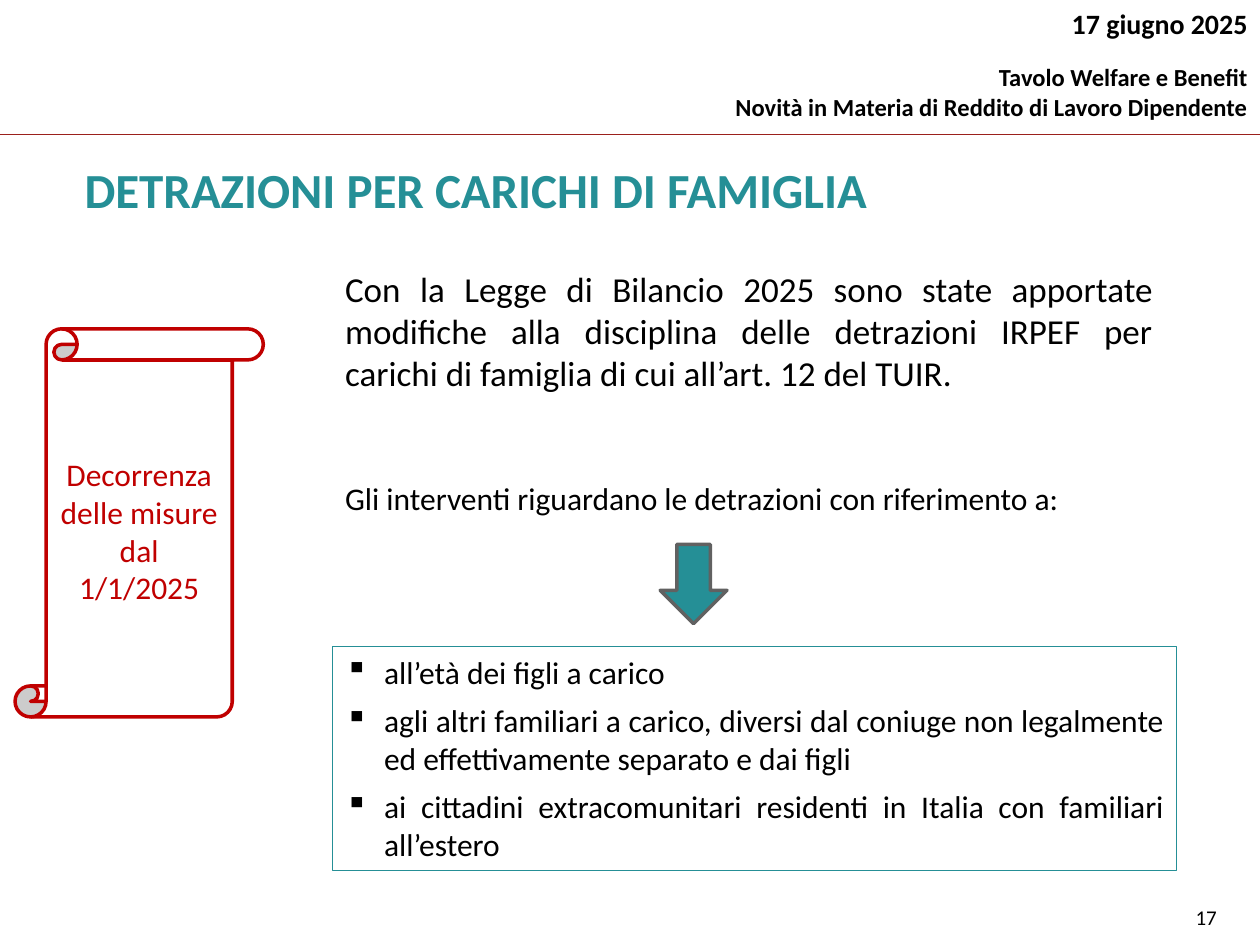
from lxml import etree
from pptx import Presentation
from pptx.dml.color import RGBColor
from pptx.enum import shapes, text
from pptx.oxml import ns
from pptx.util import Inches, Pt

FONT = "Calibri"
BLACK, WHITE, TEAL, RED = "000000", "FFFFFF", "258F96", "C00000"
ALIGN = text.PP_ALIGN
ANCHOR = text.MSO_ANCHOR


def rgb(value):
    return RGBColor.from_string(value)


def box(left, top, width, height):
    return [Inches(v) for v in (left, top, width, height)]


def add_bullet(p, char, indent):
    pPr = p._p.get_or_add_pPr()
    pPr.set("marL", str(Inches(indent)))
    pPr.set("indent", str(-Inches(indent)))
    etree.SubElement(pPr, ns.qn("a:buChar")).set("char", char)


def write(sp, *lines, sizes=(18,), color=BLACK, bold=False, align=ALIGN.LEFT,
          anchor=ANCHOR.TOP, bullet=None, after=0):
    tf = sp.text_frame
    tf.word_wrap = True
    tf.vertical_anchor = anchor
    for i, line in enumerate(lines):
        p = tf.paragraphs[0] if i == 0 else tf.add_paragraph()
        p.alignment = align
        p.space_after = Pt(after)
        if bullet:
            add_bullet(p, bullet, 0.31)
        r = p.add_run()
        r.text = line
        r.font.name = FONT
        r.font.size = Pt(sizes[min(i, len(sizes) - 1)])
        r.font.bold = bold
        r.font.color.rgb = rgb(color)
    return tf


def add_text(s, place, *lines, **fmt):
    return write(s.shapes.add_textbox(*box(*place)), *lines, **fmt)


def add_panel(s, kind, place, fill=WHITE, line=None, weight=0.75):
    sp = s.shapes.add_shape(kind, *box(*place))
    sp.shadow.inherit = False
    sp.fill.solid()
    sp.fill.fore_color.rgb = rgb(fill)
    if line:
        sp.line.color.rgb = rgb(line)
        sp.line.width = Pt(weight)
    else:
        sp.line.fill.background()
    return sp


def add_rule(s, y, color):
    c = s.shapes.add_connector(shapes.MSO_CONNECTOR.STRAIGHT,
                               0, Inches(y), Inches(10), Inches(y))
    c.line.color.rgb = rgb(color)
    c.line.width = Pt(0.75)
    etree.SubElement(c._element.spPr, ns.qn("a:effectLst"))


def add_title(s, place, words, **fmt):
    sp = s.shapes.title
    sp.left, sp.top, sp.width, sp.height = box(*place)
    write(sp, words, **fmt)


def main():
    prs = Presentation()
    prs.slide_width, prs.slide_height = Inches(10), Inches(7.5)
    s = prs.slides.add_slide(prs.slide_layouts[5])
    kinds = shapes.MSO_SHAPE

    header = add_text(s, (5.42, 0, 4.58, 1.02), "17 giugno 2025",
                      "Tavolo Welfare e Benefit",
                      "Novità in Materia di Reddito di Lavoro Dipendente",
                      sizes=(16, 14), bold=True, align=ALIGN.RIGHT)
    header.paragraphs[1].space_before = Pt(12.8)
    add_rule(s, 1.07, "9B201C")
    add_title(s, (0.35, 1.23, 6.85, 0.54), "DETRAZIONI PER CARICHI DI FAMIGLIA",
              sizes=(28,), color=TEAL, bold=True, align=ALIGN.CENTER,
              anchor=ANCHOR.MIDDLE)

    write(add_panel(s, kinds.RECTANGLE, (2.64, 2.07, 6.61, 1.18)),
          "Con la Legge di Bilancio 2025 sono state apportate modifiche alla "
          "disciplina delle detrazioni IRPEF per carichi di famiglia di cui "
          "all’art. 12 del TUIR.", sizes=(20,), align=ALIGN.JUSTIFY)
    write(add_panel(s, kinds.RECTANGLE, (2.64, 5.13, 6.7, 1.78), line=TEAL),
          "all’età dei figli a carico",
          "agli altri familiari a carico, diversi dal coniuge non legalmente "
          "ed effettivamente separato e dai figli",
          "ai cittadini extracomunitari residenti in Italia con familiari "
          "all’estero", align=ALIGN.JUSTIFY, bullet="▪", after=6)
    write(add_panel(s, kinds.RECTANGLE, (2.64, 3.75, 6.61, 0.4)),
          "Gli interventi riguardano le detrazioni con riferimento a:",
          align=ALIGN.JUSTIFY)

    add_panel(s, kinds.DOWN_ARROW, (5.24, 4.32, 0.53, 0.63), TEAL, "616161", 2)
    write(add_panel(s, kinds.VERTICAL_SCROLL, (0.12, 2.61, 1.97, 3.08),
                    line=RED, weight=2),
          "Decorrenza delle misure dal 1/1/2025", color=RED,
          align=ALIGN.CENTER, anchor=ANCHOR.MIDDLE)
    add_text(s, (9.39, 7.13, 0.61, 0.29), "17", sizes=(12,))

    prs.save("out.pptx")


if __name__ == "__main__":
    main()
